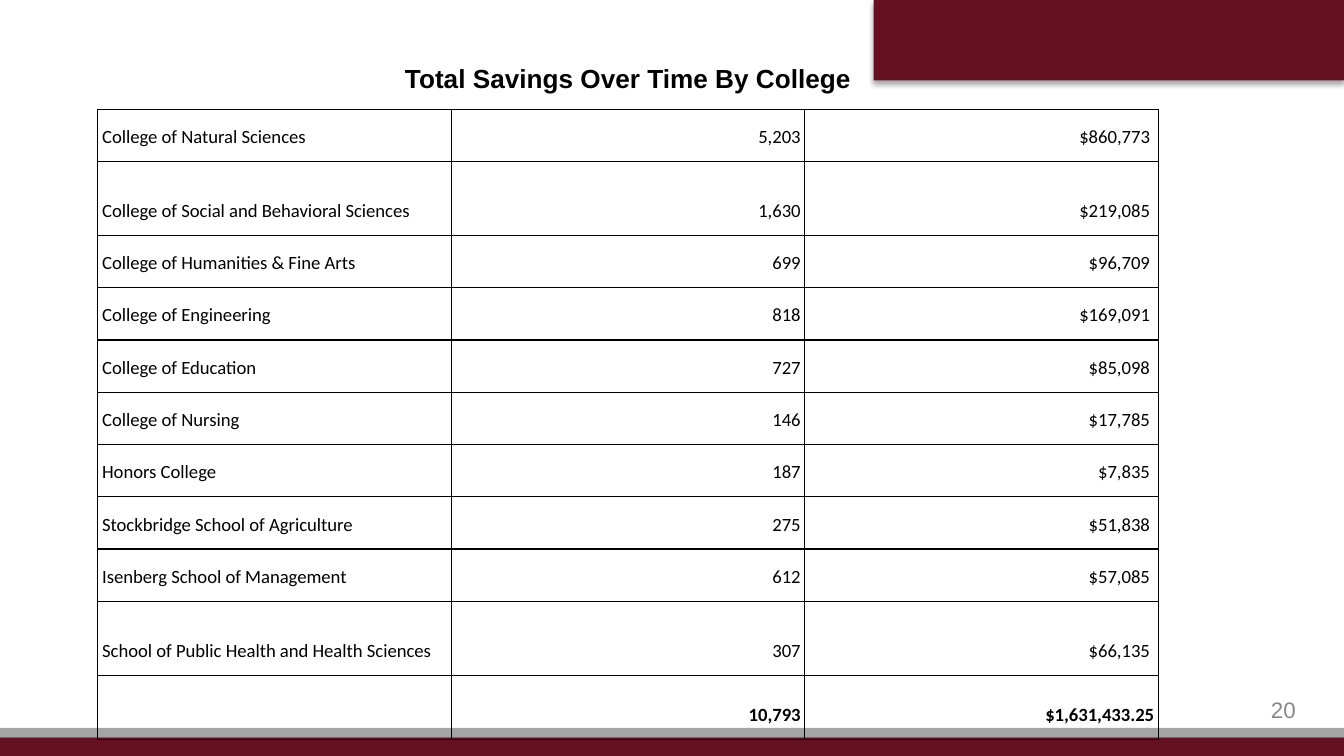
from dataclasses import dataclass

from pptx import Presentation
from pptx.dml.color import RGBColor
from pptx.enum.shapes import MSO_SHAPE as Preset
from pptx.enum.text import MSO_ANCHOR as Anchor, PP_ALIGN as Align
from pptx.oxml import parse_xml
from pptx.oxml.ns import nsdecls
from pptx.util import Cm, Pt

WIDTH, HEIGHT = 25.4, 14.29


@dataclass(frozen=True)
class Theme:
    maroon: str = "661023"
    gray: str = "A4A4A4"
    black: str = "000000"
    muted: str = "888888"
    heading_font: str = "Arial"
    body_font: str = "Calibri"
    heading_size: int = 14
    body_size: int = 10
    number_size: int = 12
    border_width: float = 0.75


TITLE = "Total Savings Over Time By College"
COLLEGES = [
    ("College of Natural Sciences", "5,203", "$860,773 "),
    ("College of Social and Behavioral Sciences", "1,630", "$219,085 "),
    ("College of Humanities & Fine Arts", "699", "$96,709 "),
    ("College of Engineering", "818", "$169,091 "),
    ("College of Education", "727", "$85,098 "),
    ("College of Nursing", "146", "$17,785 "),
    ("Honors College", "187", "$7,835 "),
    ("Stockbridge School of Agriculture", "275", "$51,838 "),
    ("Isenberg School of Management", "612", "$57,085 "),
    ("School of Public Health and Health Sciences", "307", "$66,135 "),
]
TOTALS = ("", "10,793", "$1,631,433.25")
TITLE_HEIGHT, ROW_HEIGHT, TALL_HEIGHT, TOTAL_HEIGHT = 0.97, 0.91, 1.4, 1.21
LONG_NAME = 40


def apply(target, formats):
    for attribute, value in formats.items():
        setattr(target, attribute, value)


class SlideBuilder:
    def __init__(self, slide, theme):
        self.slide = slide
        self.theme = theme

    def band(self, left, top, width, height, color, shadow=False):
        bar = self.slide.shapes.add_shape(
            Preset.RECTANGLE, Cm(left), Cm(top), Cm(width), Cm(height))
        bar.fill.solid()
        bar.fill.fore_color.rgb = RGBColor.from_string(color)
        bar.line.fill.background()
        bar.shadow.inherit = False
        if shadow:
            effects = bar._element.spPr.find("{*}effectLst")
            effects.append(parse_xml(
                f'<a:outerShdw {nsdecls("a")} blurRad="{Pt(3.1)}" dist="{Pt(1.8)}" '
                f'dir="5400000" rotWithShape="0"><a:srgbClr val="{self.theme.black}">'
                '<a:alpha val="35000"/></a:srgbClr></a:outerShdw>'))

    def fill_text(self, frame, text, align, font, size, color, bold=False, spacing=1.0):
        paragraph = frame.paragraphs[0]
        apply(paragraph, {"alignment": align, "line_spacing": spacing})
        # An empty cell takes its size from the paragraph alone.
        target = paragraph.add_run() if text else paragraph
        target.text = text
        apply(target.font, {"name": font, "size": Pt(size), "bold": bold})
        target.font.color.rgb = RGBColor.from_string(color)

    def page_number(self, number, left, top, width, height):
        frame = self.slide.shapes.add_textbox(
            Cm(left), Cm(top), Cm(width), Cm(height)).text_frame
        apply(frame, {"word_wrap": True, "vertical_anchor": Anchor.MIDDLE})
        self.fill_text(frame, number, Align.RIGHT, self.theme.heading_font,
                       self.theme.number_size, self.theme.muted)

    def style_cell(self, cell, side_margin, anchor, borders):
        """Draw the sides named in borders (from "LRTB") and hide the others."""
        apply(cell, {
            "margin_left": Cm(side_margin), "margin_right": Cm(side_margin),
            "margin_top": Cm(0.25), "margin_bottom": Cm(0.25),
            "vertical_anchor": anchor,
        })
        properties = cell._tc.get_or_add_tcPr()
        solid = f'<a:solidFill><a:srgbClr val="{self.theme.black}"/></a:solidFill>'
        for side in "LRTB":
            paint = solid if side in borders else "<a:noFill/>"
            properties.append(parse_xml(
                f'<a:ln{side} {nsdecls("a")} w="{Pt(self.theme.border_width)}">'
                f'{paint}</a:ln{side}>'))
        cell.fill.background()

    def savings_table(self, left, top, column_width):
        theme = self.theme
        records = [*COLLEGES, TOTALS]
        heights = [TITLE_HEIGHT]
        heights += [TALL_HEIGHT if len(name) >= LONG_NAME else ROW_HEIGHT
                    for name, _, _ in COLLEGES]
        heights.append(TOTAL_HEIGHT)
        table = self.slide.shapes.add_table(
            len(heights), 3, Cm(left), Cm(top),
            Cm(3 * column_width), Cm(sum(heights))).table
        apply(table, {"first_row": False, "horz_banding": False})
        for column in table.columns:
            column.width = Cm(column_width)
        for row, height in zip(table.rows, heights):
            row.height = Cm(height)

        heading = table.cell(0, 0)
        heading.merge(table.cell(0, 2))
        for cell in table.rows[0].cells:
            self.style_cell(cell, 0.25, Anchor.TOP, "B")
        self.fill_text(heading.text_frame, TITLE, Align.CENTER, theme.heading_font,
                       theme.heading_size, theme.black, bold=True)

        for row, record in enumerate(records, start=1):
            for column, text in enumerate(record):
                cell = table.cell(row, column)
                self.style_cell(cell, 0.08, Anchor.BOTTOM, "LRTB")
                self.fill_text(cell.text_frame, text,
                               Align.RIGHT if column else Align.LEFT,
                               theme.body_font, theme.body_size, theme.black,
                               bold=record is TOTALS, spacing=1.15)


def main():
    deck = Presentation()
    apply(deck, {"slide_width": Cm(WIDTH), "slide_height": Cm(HEIGHT)})
    theme = Theme()
    builder = SlideBuilder(deck.slides.add_slide(deck.slide_layouts[6]), theme)
    builder.band(16.51, 0, 8.89, 1.52, theme.maroon, shadow=True)
    builder.band(0, 13.76, WIDTH, 0.18, theme.gray)
    builder.band(0, 13.94, WIDTH, HEIGHT - 13.94, theme.maroon)
    builder.page_number("20", 18.82, 13.03, 5.92, 0.76)
    builder.savings_table(1.85, 0.97, 6.68)
    deck.save("out.pptx")


if __name__ == "__main__":
    main()
